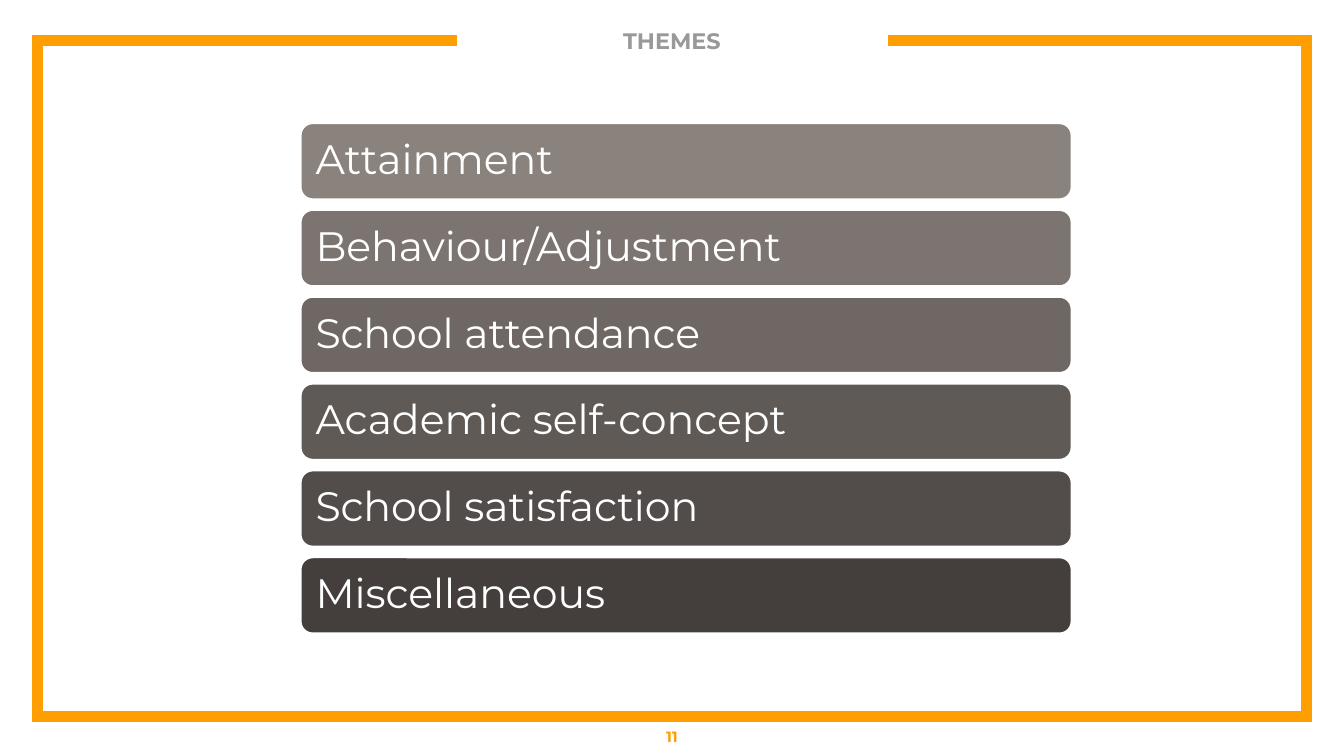
import pptx
import pptx.dml.color
import pptx.enum.shapes
import pptx.enum.text
import pptx.oxml
import pptx.oxml.ns
import pptx.util

Inches = pptx.util.Inches
Pt = pptx.util.Pt

TITLE = "THEMES"
PAGE_NUMBER = "11"
BARS = [
    ("Attainment", "8A827D"),
    ("Behaviour/Adjustment", "7C7470"),
    ("School attendance", "6E6763"),
    ("Academic self-concept", "605A56"),
    ("School satisfaction", "524C4A"),
    ("Miscellaneous", "443F3D"),
]
THEME = {
    "font": "Montserrat",
    "accent": "FF9E00",
    "muted": "999999",
    "light": "FFFFFF",
    "title_size": 12,
    "bar_size": 22,
    "number_size": 8,
    "frame_width": 6,
    "bar_outline": 2,
}
SLIDE_WIDTH = 10
SLIDE_HEIGHT = SLIDE_WIDTH * 9 / 16
FRAME = [(3.4, 0.3), (0.28, 0.3), (0.28, 5.33), (9.72, 5.33), (9.72, 0.3), (6.61, 0.3)]
BAR_LEFT, BAR_WIDTH, BAR_HEIGHT = 2.23, 5.75, 0.58
FIRST_TOP, LAST_TOP = 0.91, 4.14
BAR_STEP = (LAST_TOP - FIRST_TOP) / (len(BARS) - 1)


def color(name):
    return pptx.dml.color.RGBColor.from_string(THEME.get(name, name))


def write(shape, text, size, tone, bold, align, inset):
    frame = shape.text_frame
    frame.word_wrap = True
    frame.auto_size = pptx.enum.text.MSO_AUTO_SIZE.NONE
    frame.vertical_anchor = pptx.enum.text.MSO_ANCHOR.MIDDLE
    frame.margin_left = frame.margin_right = Inches(inset)
    frame.margin_top = frame.margin_bottom = Inches(inset)
    para = frame.paragraphs[0]
    para.alignment = align
    span = para.add_run()
    span.text = text
    span.font.name = THEME["font"]
    span.font.size = Pt(THEME[size])
    span.font.bold = bold
    span.font.color.rgb = color(tone)
    return para


def draw_frame(page):
    points = [(Inches(x), Inches(y)) for x, y in FRAME]
    builder = page.shapes.build_freeform(*points[0])
    builder.add_line_segments(points[1:], close=False)
    border = builder.convert_to_shape()
    border.shadow.inherit = False
    border.fill.background()
    border.line.color.rgb = color("accent")
    border.line.width = Pt(THEME["frame_width"])
    outline = border.line._get_or_add_ln()
    miter = pptx.oxml.parse_xml(
        f'<a:miter {pptx.oxml.ns.nsdecls("a")} lim="800000"/>'
    )
    outline.append(miter)


def draw_bar(page, index, label, fill):
    bar = page.shapes.add_shape(
        pptx.enum.shapes.MSO_SHAPE.ROUNDED_RECTANGLE,
        Inches(BAR_LEFT), Inches(FIRST_TOP + index * BAR_STEP),
        Inches(BAR_WIDTH), Inches(BAR_HEIGHT),
    )
    bar.shadow.inherit = False
    bar.fill.solid()
    bar.fill.fore_color.rgb = color(fill)
    bar.line.color.rgb = color("light")
    bar.line.width = Pt(THEME["bar_outline"])
    para = write(bar, label, "bar_size", "light", False, pptx.enum.text.PP_ALIGN.LEFT, 0.09)
    para.line_spacing = 0.9


def main():
    deck = pptx.Presentation()
    deck.slide_width, deck.slide_height = Inches(SLIDE_WIDTH), Inches(SLIDE_HEIGHT)
    page = deck.slides.add_slide(deck.slide_layouts[5])
    center = pptx.enum.text.PP_ALIGN.CENTER

    draw_frame(page)

    title = page.shapes.title
    title.left, title.top = Inches(3.55), Inches(0.11)
    title.width, title.height = Inches(2.9), Inches(0.39)
    write(title, TITLE, "title_size", "muted", True, center, 0)

    number = page.shapes.add_textbox(Inches(0), Inches(5.33), Inches(10), Inches(0.3))
    write(number, PAGE_NUMBER, "number_size", "accent", True, center, 0.1)

    for index, (label, fill) in enumerate(BARS):
        draw_bar(page, index, label, fill)

    deck.save("out.pptx")


if __name__ == "__main__":
    main()
